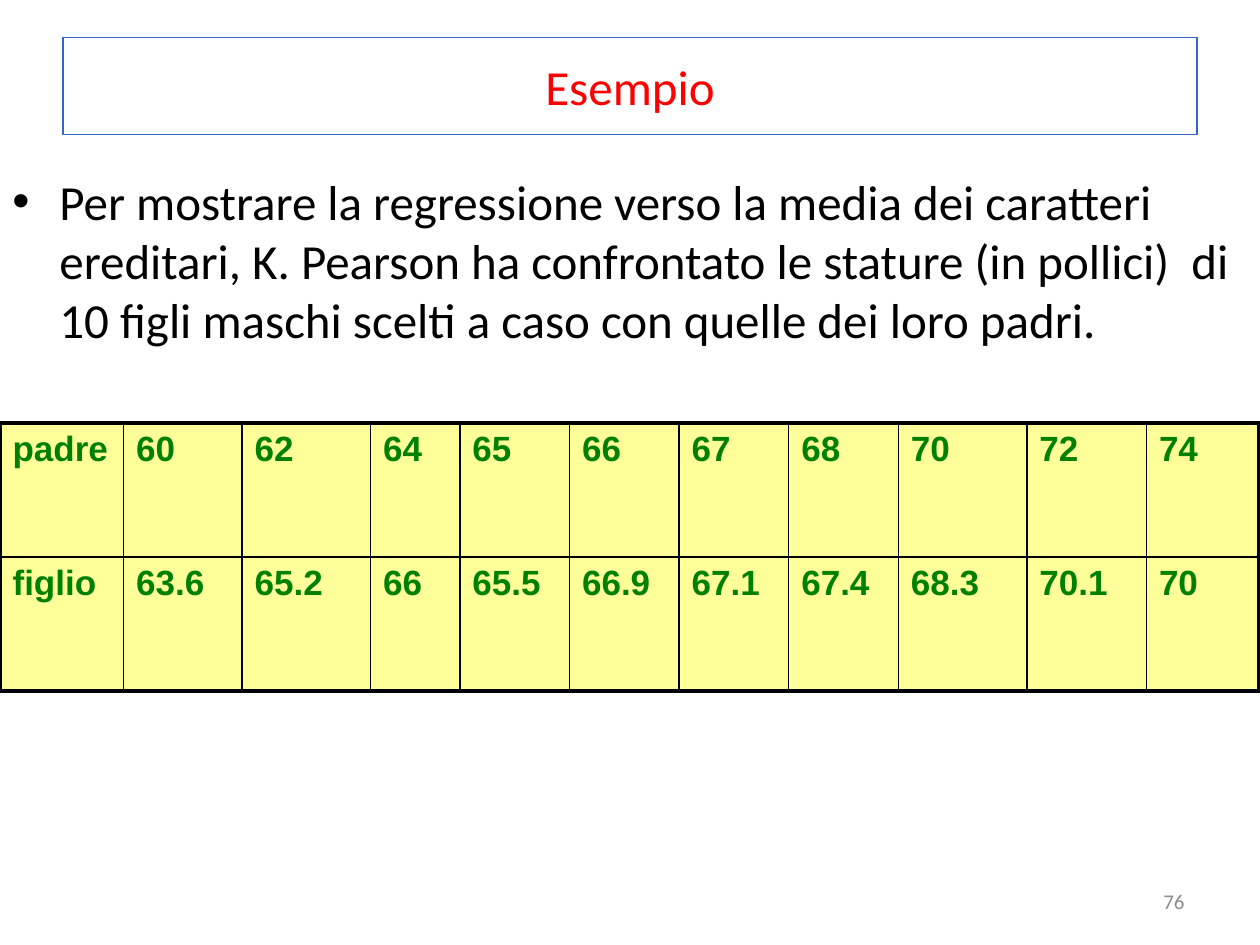
from pptx import Presentation
from pptx.dml.color import RGBColor
from pptx.enum.shapes import MSO_SHAPE
from pptx.enum.text import MSO_ANCHOR, PP_ALIGN
from pptx.oxml.ns import qn
from pptx.util import Cm, Pt
from lxml import etree

RECTANGLE = MSO_SHAPE.RECTANGLE
MIDDLE = MSO_ANCHOR.MIDDLE
TOP = MSO_ANCHOR.TOP
LEFT, CENTER, RIGHT = PP_ALIGN.LEFT, PP_ALIGN.CENTER, PP_ALIGN.RIGHT

THIN, THICK = 1, 2.25
COLUMN_WIDTHS = [2.49, 2.39, 2.59, 1.8, 2.21, 2.21, 2.21, 2.21, 2.59, 2.41, 2.27]
HEIGHTS = [
    ["padre", "60", "62", "64", "65", "66", "67", "68", "70", "72", "74"],
    ["figlio", "63.6", "65.2", "66", "65.5", "66.9", "67.1", "67.4", "68.3", "70.1", "70"],
]
INTRODUCTION = (
    "Per mostrare la regressione verso la media dei caratteri ereditari, "
    "K. Pearson ha confrontato le stature (in pollici)  di 10 figli maschi "
    "scelti a caso con quelle dei loro padri."
)


def color(value):
    """Turn a hex string into a colour."""
    return RGBColor.from_string(value)


def write(frame, text, size, font_color, align=LEFT, anchor=TOP, font="Calibri", bold=False):
    """Fill a text frame with one formatted paragraph and return the paragraph."""
    frame.text = text
    frame.word_wrap = True
    frame.vertical_anchor = anchor
    para = frame.paragraphs[0]
    para.alignment = align
    for span in para.runs:
        span.font.name = font
        span.font.size = Pt(size)
        span.font.bold = bold
        span.font.color.rgb = color(font_color)
    return para


def add_bullet(para, indent):
    """Give a paragraph a round bullet with a hanging indent."""
    properties = para._p.get_or_add_pPr()
    properties.set("marL", str(indent))
    properties.set("indent", str(-indent))
    etree.SubElement(properties, qn("a:buFont"), typeface="Arial")
    etree.SubElement(properties, qn("a:buChar"), char="•")


def add_border(cell, side, width):
    """Draw one black border of a table cell."""
    properties = cell._tc.get_or_add_tcPr()
    line = etree.SubElement(properties, qn(f"a:ln{side}"), w=str(Pt(width)))
    fill = etree.SubElement(line, qn("a:solidFill"))
    etree.SubElement(fill, qn("a:srgbClr"), val="000000")


def add_title(page, left, top, width, height):
    """Place the outlined title."""
    box = page.shapes.add_shape(RECTANGLE, left, top, width, height)
    box.shadow.inherit = False
    box.fill.background()
    box.line.color.rgb = color("3366CC")
    box.line.width = Pt(0.75)
    write(box.text_frame, "Esempio", 28, "FF0000", CENTER, MIDDLE)


def add_introduction(page, left, top, width, height):
    """Place the bulleted introduction."""
    box = page.shapes.add_textbox(left, top, width, height)
    para = write(box.text_frame, INTRODUCTION, 28, "000000")
    add_bullet(para, Cm(0.95))


def add_height_table(page, left, top, width, height):
    """Place the table of fathers' and sons' heights with a thick outer frame."""
    last_row, last_column = len(HEIGHTS) - 1, len(COLUMN_WIDTHS) - 1
    frame = page.shapes.add_table(last_row + 1, last_column + 1, left, top, width, height)
    table = frame.table
    for column, share in zip(table.columns, COLUMN_WIDTHS):
        column.width = round(width * share / sum(COLUMN_WIDTHS))
    for row, values in enumerate(HEIGHTS):
        for column, value in enumerate(values):
            cell = table.cell(row, column)
            write(cell.text_frame, value, 20, "008000", font="Arial", bold=True)
            outer_sides = {
                "L": column == 0,
                "R": column == last_column,
                "T": row == 0,
                "B": row == last_row,
            }
            for side, is_outer in outer_sides.items():
                add_border(cell, side, THICK if is_outer else THIN)
            cell.fill.solid()
            cell.fill.fore_color.rgb = color("FFFF99")


def add_page_number(page, left, top, width, height):
    """Place the page number."""
    box = page.shapes.add_textbox(left, top, width, height)
    write(box.text_frame, "76", 12, "8C8C8C", RIGHT, MIDDLE)


def main():
    """Build the deck and save it."""
    deck = Presentation()
    deck.slide_width, deck.slide_height = Cm(25.4), Cm(19.05)
    page = deck.slides.add_slide(deck.slide_layouts[6])
    add_page_number(page, Cm(18.2), Cm(17.66), Cm(5.93), Cm(1.01))
    add_title(page, Cm(1.27), Cm(0.76), Cm(22.86), Cm(1.96))
    add_introduction(page, Cm(0), Cm(3.33), Cm(25.4), Cm(4.5))
    add_height_table(page, Cm(0), Cm(8.53), Cm(25.38), Cm(5.4))
    deck.save("out.pptx")


if __name__ == "__main__":
    main()
